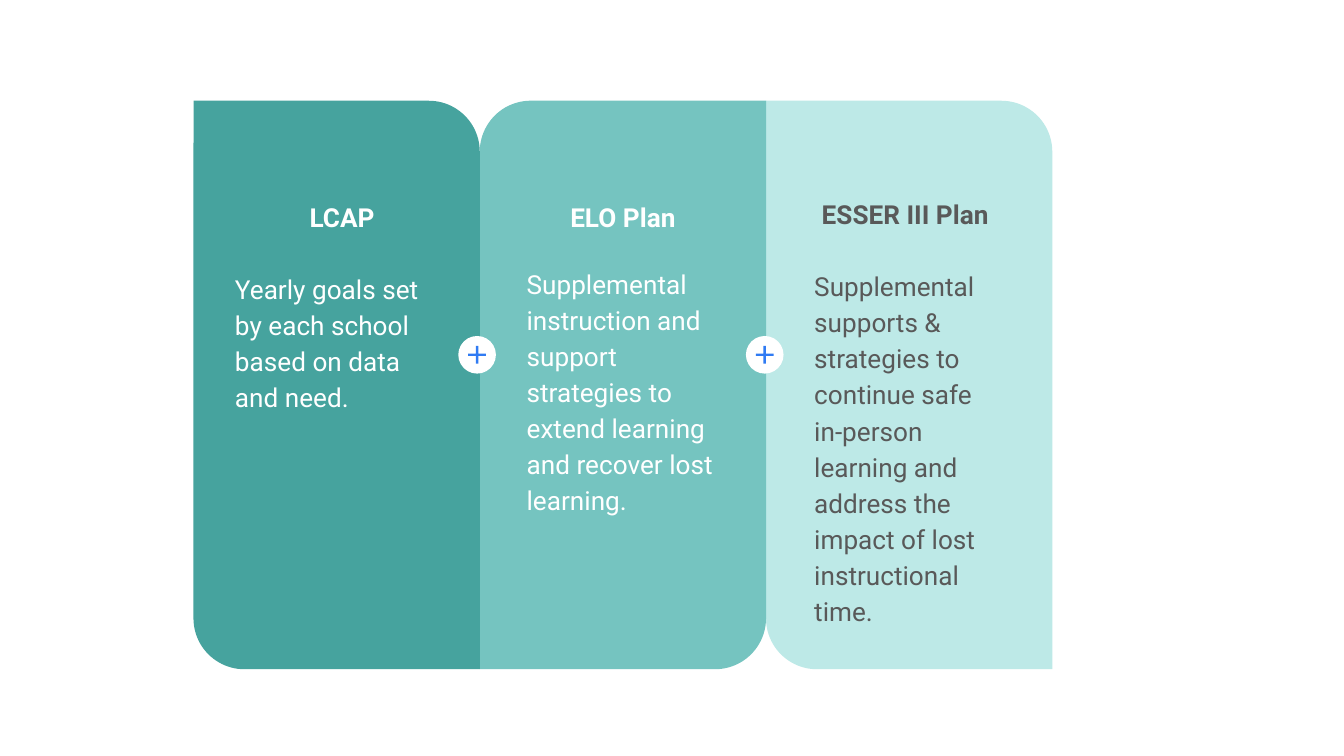
from pptx import Presentation
from pptx.dml.color import RGBColor
from pptx.enum.shapes import MSO_SHAPE
from pptx.enum.text import PP_ALIGN
from pptx.util import Inches, Pt

DARK_TEAL = RGBColor(0x46, 0xA3, 0x9E)
MID_TEAL = RGBColor(0x75, 0xC4, 0xC0)
PALE_TEAL = RGBColor(0xBD, 0xE9, 0xE7)
WHITE = RGBColor(0xFF, 0xFF, 0xFF)
GRAY = RGBColor(0x59, 0x59, 0x59)
BLUE = RGBColor(0x30, 0x7B, 0xF3)

PLANS = [
    {"heading": "LCAP",
     "summary": "Yearly goals set by each school based on data and need.",
     "fill": DARK_TEAL, "ink": WHITE, "corners": (0, 0.178),
     "heading_box": (1.69, 1.4, 1.71, 1.24),
     "summary_box": (1.65, 1.9, 1.71, 2.08)},
    {"heading": "ELO Plan",
     "summary": "Supplemental instruction and support strategies to extend "
                "learning and recover lost learning.",
     "fill": MID_TEAL, "ink": WHITE, "corners": (0.178, 0),
     "heading_box": (3.84, 1.4, 1.59, 1.24),
     "summary_box": (3.82, 1.86, 1.59, 2.59)},
    {"heading": "ESSER III Plan",
     "summary": "Supplemental supports & strategies to continue safe in-person "
                "learning and address the impact of lost instructional time.",
     "fill": PALE_TEAL, "ink": GRAY, "corners": (0, 0.178),
     "heading_box": (5.94, 1.38, 1.59, 0.5),
     "summary_box": (5.96, 1.88, 1.59, 2.65)},
]

PANEL_LEFT, PANEL_TOP, PANEL_WIDTH, PANEL_HEIGHT = 1.44, 0.75, 2.13, 4.23
BADGE_LEFT, BADGE_TOP, BADGE_SIZE = 3.41, 2.5, 0.28
BADGE_STEP, PLUS_INSET = 2.14, 0.05


def add_filled(group, kind, box, color, adjustments=()):
    shape = group.shapes.add_shape(kind, *map(Inches, box))
    shape.shadow.inherit = False
    shape.fill.solid()
    shape.fill.fore_color.rgb = color
    shape.line.fill.background()
    for index, value in enumerate(adjustments):
        shape.adjustments[index] = value


def add_text(group, box, text, color, bold=False):
    frame = group.shapes.add_textbox(*map(Inches, box)).text_frame
    frame.word_wrap = True
    frame.margin_left = frame.margin_right = Inches(0.1)
    frame.margin_top = frame.margin_bottom = Inches(0.1)
    paragraph = frame.paragraphs[0]
    run = paragraph.add_run()
    run.text = text
    run.font.name = "Roboto"
    run.font.size = Pt(14)
    run.font.bold = bold
    run.font.color.rgb = color
    return paragraph


def add_plan(slide, column, plan):
    group = slide.shapes.add_group_shape()
    left = PANEL_LEFT + column * PANEL_WIDTH
    add_filled(group, MSO_SHAPE.ROUND_2_DIAG_RECTANGLE,
               (left, PANEL_TOP, PANEL_WIDTH, PANEL_HEIGHT),
               plan["fill"], plan["corners"])
    heading = add_text(group, plan["heading_box"], plan["heading"],
                       plan["ink"], bold=True)
    heading.alignment = PP_ALIGN.CENTER
    summary = add_text(group, plan["summary_box"], plan["summary"], plan["ink"])
    summary.line_spacing = 1.15
    summary.space_after = Pt(16)


def add_plus_badge(slide, seam):
    group = slide.shapes.add_group_shape()
    left = BADGE_LEFT + seam * BADGE_STEP
    plus_size = BADGE_SIZE - 2 * PLUS_INSET
    add_filled(group, MSO_SHAPE.OVAL,
               (left, BADGE_TOP, BADGE_SIZE, BADGE_SIZE), WHITE)
    add_filled(group, MSO_SHAPE.MATH_PLUS,
               (left + PLUS_INSET, BADGE_TOP + PLUS_INSET, plus_size, plus_size),
               BLUE, (0.1,))


def main():
    deck = Presentation()
    deck.slide_width = Inches(10)
    deck.slide_height = deck.slide_width * 9 // 16
    slide = deck.slides.add_slide(deck.slide_layouts[6])
    for column, plan in reversed(list(enumerate(PLANS))):
        add_plan(slide, column, plan)
    for seam in range(len(PLANS) - 1):
        add_plus_badge(slide, seam)
    deck.save("out.pptx")


if __name__ == "__main__":
    main()
